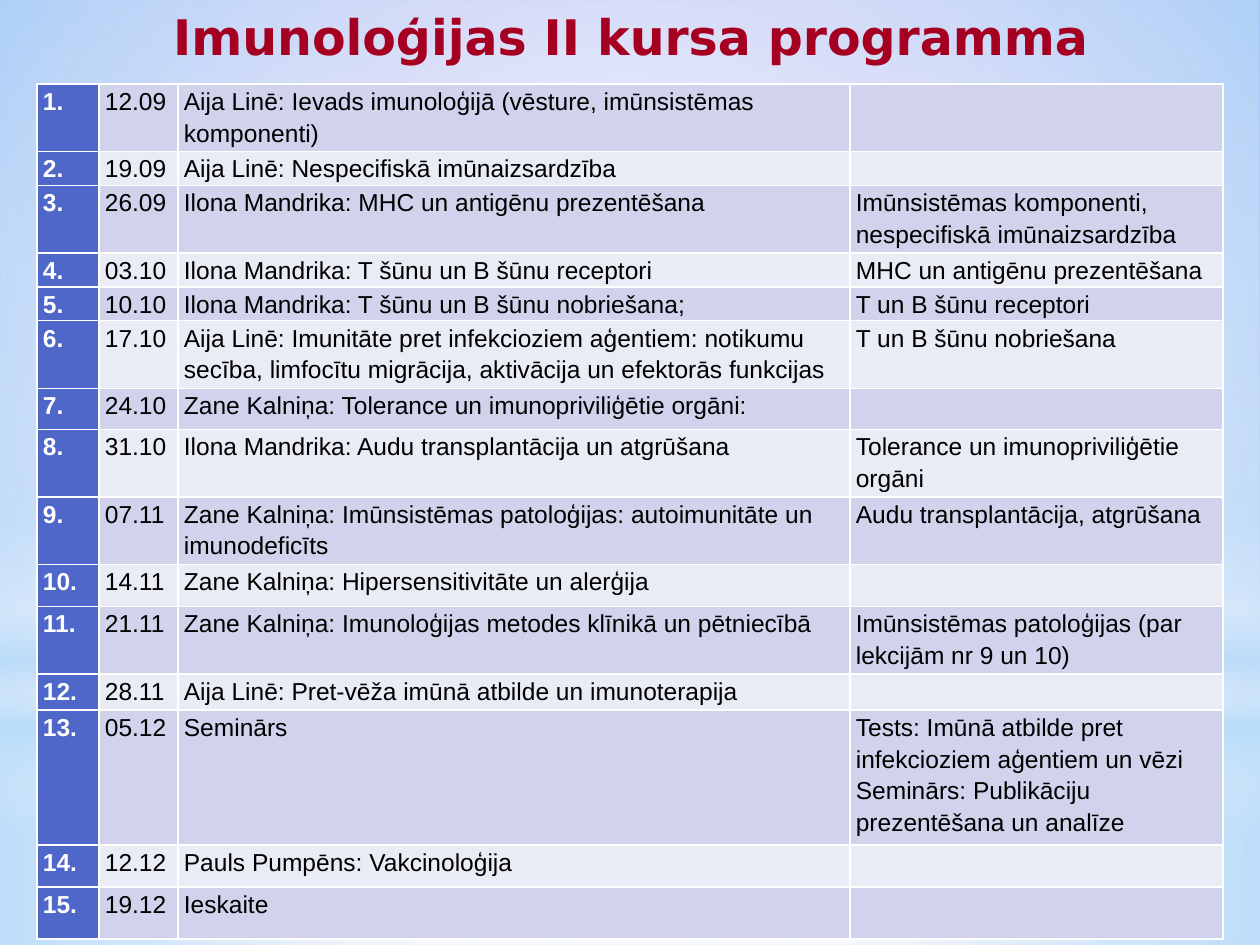
import pptx
import pptx.util
import pptx.dml.color
import pptx.enum.shapes
import pptx.enum.text
import pptx.oxml
import pptx.oxml.ns
from lxml import etree

RGB = pptx.dml.color.RGBColor
SHAPE = pptx.enum.shapes.MSO_SHAPE
qn = pptx.oxml.ns.qn

SCALE = 914400 / 126  # EMU per px
WHITE = RGB(0xFF, 0xFF, 0xFF)
BLACK = RGB(0x00, 0x00, 0x00)
RED = RGB(0xA5, 0x00, 0x21)
BLUE = RGB(0x4E, 0x67, 0xC8)
SKY = RGB(0xB4, 0xDC, 0xFA)
BANDS = [RGB(0xD0, 0xD3, 0xEB), RGB(0xE9, 0xEB, 0xF5)]
BASE = [(0, RGB(0x98, 0xA4, 0xED), 100), (50, RGB(0xC1, 0xC7, 0xF2), 100),
        (100, RGB(0xE1, 0xE3, 0xF8), 100)]

# Backdrop layers: preset, top, height, stops (place, colour, opacity), radial
LAYERS = [
    (SHAPE.RECTANGLE, 703, 242,
     [(0, WHITE, 91), (37, WHITE, 76), (100, SKY, 79)], True),
    (SHAPE.RECTANGLE, 0, 703,
     [(0, WHITE, 89), (48, WHITE, 62), (100, SKY, 79)], True),
    (SHAPE.RECTANGLE, 519, 315,
     [(0, WHITE, 0), (29, WHITE, 30), (45, SKY, 40), (55, WHITE, 26),
      (65, SKY, 60), (100, WHITE, 0)], False),
    (SHAPE.OVAL, 221, 703, [(0, WHITE, 100), (56, WHITE, 0)], True),
]

COLS = [62, 79, 672, 373]
# Lectures: row height, date, lecture, seminar
PLAN = [
    (66, "12.09", "Aija Linē: Ievads imunoloģijā (vēsture, imūnsistēmas komponenti)", ""),
    (33, "19.09", "Aija Linē: Nespecifiskā imūnaizsardzība", ""),
    (66, "26.09", "Ilona Mandrika: MHC un antigēnu prezentēšana",
     "Imūnsistēmas komponenti, nespecifiskā imūnaizsardzība"),
    (33, "03.10", "Ilona Mandrika: T šūnu un B šūnu receptori",
     "MHC un antigēnu prezentēšana"),
    (33, "10.10", "Ilona Mandrika: T šūnu un B šūnu nobriešana;", "T un B šūnu receptori"),
    (67, "17.10", "Aija Linē: Imunitāte pret infekcioziem aģentiem: notikumu secība, "
     "limfocītu migrācija, aktivācija un efektorās funkcijas", "T un B šūnu nobriešana"),
    (41, "24.10", "Zane Kalniņa: Tolerance un imunopriviliģētie orgāni:", ""),
    (66, "31.10", "Ilona Mandrika: Audu transplantācija un atgrūšana",
     "Tolerance un imunopriviliģētie orgāni"),
    (66, "07.11", "Zane Kalniņa: Imūnsistēmas patoloģijas: autoimunitāte un imunodeficīts",
     "Audu transplantācija, atgrūšana"),
    (42, "14.11", "Zane Kalniņa: Hipersensitivitāte un alerģija", ""),
    (66, "21.11", "Zane Kalniņa: Imunoloģijas metodes klīnikā un pētniecībā",
     "Imūnsistēmas patoloģijas (par lekcijām nr 9 un 10)"),
    (36, "28.11", "Aija Linē: Pret-vēža imūnā atbilde un imunoterapija", ""),
    (132, "05.12", "Seminārs", "Tests: Imūnā atbilde pret infekcioziem aģentiem un vēzi\n"
     "Seminārs: Publikāciju prezentēšana un analīze"),
    (42, "12.12", "Pauls Pumpēns: Vakcinoloģija", ""),
    (52, "19.12", "Ieskaite", ""),
]


def px(n):
    return pptx.util.Emu(round(n * SCALE))


def style(run, face, size, color, bold):
    run.font.name = face
    run.font.size = pptx.util.Pt(size)
    run.font.color.rgb = color
    run.font.bold = bold


def blend(owner, stops, radial):
    """Swap the solid fill of an element for a gradient."""
    grad = etree.Element(qn("a:gradFill"), rotWithShape="1")
    items = etree.SubElement(grad, qn("a:gsLst"))
    for place, color, alpha in stops:
        stop = etree.SubElement(items, qn("a:gs"), pos=str(place * 1000))
        tint = etree.SubElement(stop, qn("a:srgbClr"), val=str(color))
        if alpha < 100:
            etree.SubElement(tint, qn("a:alpha"), val=str(alpha * 1000))
    if radial:
        way = etree.SubElement(grad, qn("a:path"), path="circle")
        etree.SubElement(way, qn("a:fillToRect"), dict.fromkeys("ltrb", "50000"))
    else:
        etree.SubElement(grad, qn("a:lin"), ang="5400000", scaled="0")
    owner.replace(owner.find(qn("a:solidFill")), grad)


def add_layer(slide, kind, top, height, stops, radial):
    shape = slide.shapes.add_shape(kind, 0, px(top), px(1260), px(height))
    shape.shadow.inherit = False
    shape.line.fill.background()
    shape.fill.solid()
    blend(shape.element.spPr, stops, radial)


def set_title(slide, text):
    title = slide.shapes.title
    title.left, title.top, title.width, title.height = px(0), px(0), px(1261), px(111)
    frame = title.text_frame
    frame.text = text
    frame.word_wrap = False
    frame.auto_size = pptx.enum.text.MSO_AUTO_SIZE.SHAPE_TO_FIT_TEXT
    frame.vertical_anchor = pptx.enum.text.MSO_ANCHOR.TOP
    line = frame.paragraphs[0]
    line.alignment = pptx.enum.text.PP_ALIGN.CENTER
    style(line.runs[0], "DejaVu Sans", 28, RED, True)
    # Bring the title in front of the backdrop
    title.element.getparent().append(title.element)


def add_edges(cell):
    props = cell._tc.get_or_add_tcPr()
    for side in ("lnL", "lnR", "lnT", "lnB"):
        edge = etree.SubElement(props, qn("a:" + side), w="12700")
        fill = etree.SubElement(edge, qn("a:solidFill"))
        etree.SubElement(fill, qn("a:srgbClr"), val=str(WHITE))


def set_cell(cell, text, fill, color, bold):
    cell.margin_left = cell.margin_right = px(6)
    cell.margin_top = cell.margin_bottom = 0
    add_edges(cell)
    cell.fill.solid()
    cell.fill.fore_color.rgb = fill
    cell.text_frame.text = text
    for line in cell.text_frame.paragraphs:
        line.line_spacing = 1.15
        for run in line.runs:
            style(run, "Arial", 14, color, bold)
        if not line.runs:
            etree.SubElement(line._p, qn("a:endParaRPr"), sz="1400")


def add_plan(slide):
    high = sum(row[0] for row in PLAN)
    table = slide.shapes.add_table(len(PLAN), len(COLS), px(37), px(84),
                                   px(sum(COLS)), px(high)).table
    table.first_row = table.horz_banding = False
    for col, width in zip(table.columns, COLS):
        col.width = px(width)
    for i, (height, *texts) in enumerate(PLAN):
        table.rows[i].height = px(height)
        set_cell(table.cell(i, 0), f"{i + 1}.", BLUE, WHITE, True)
        for j, text in enumerate(texts, 1):
            set_cell(table.cell(i, j), text, BANDS[i % 2], BLACK, False)


def main():
    deck = pptx.Presentation()
    deck.slide_width, deck.slide_height = px(1260), px(945)
    slide = deck.slides.add_slide(deck.slide_layouts[5])

    # Background and backdrop
    slide.background.fill.solid()
    blend(slide.element.find(".//" + qn("p:bgPr")), BASE, False)
    for layer in LAYERS:
        add_layer(slide, *layer)

    # Title and course plan
    set_title(slide, "Imunoloģijas II kursa programma")
    add_plan(slide)
    deck.save("out.pptx")


if __name__ == "__main__":
    main()
